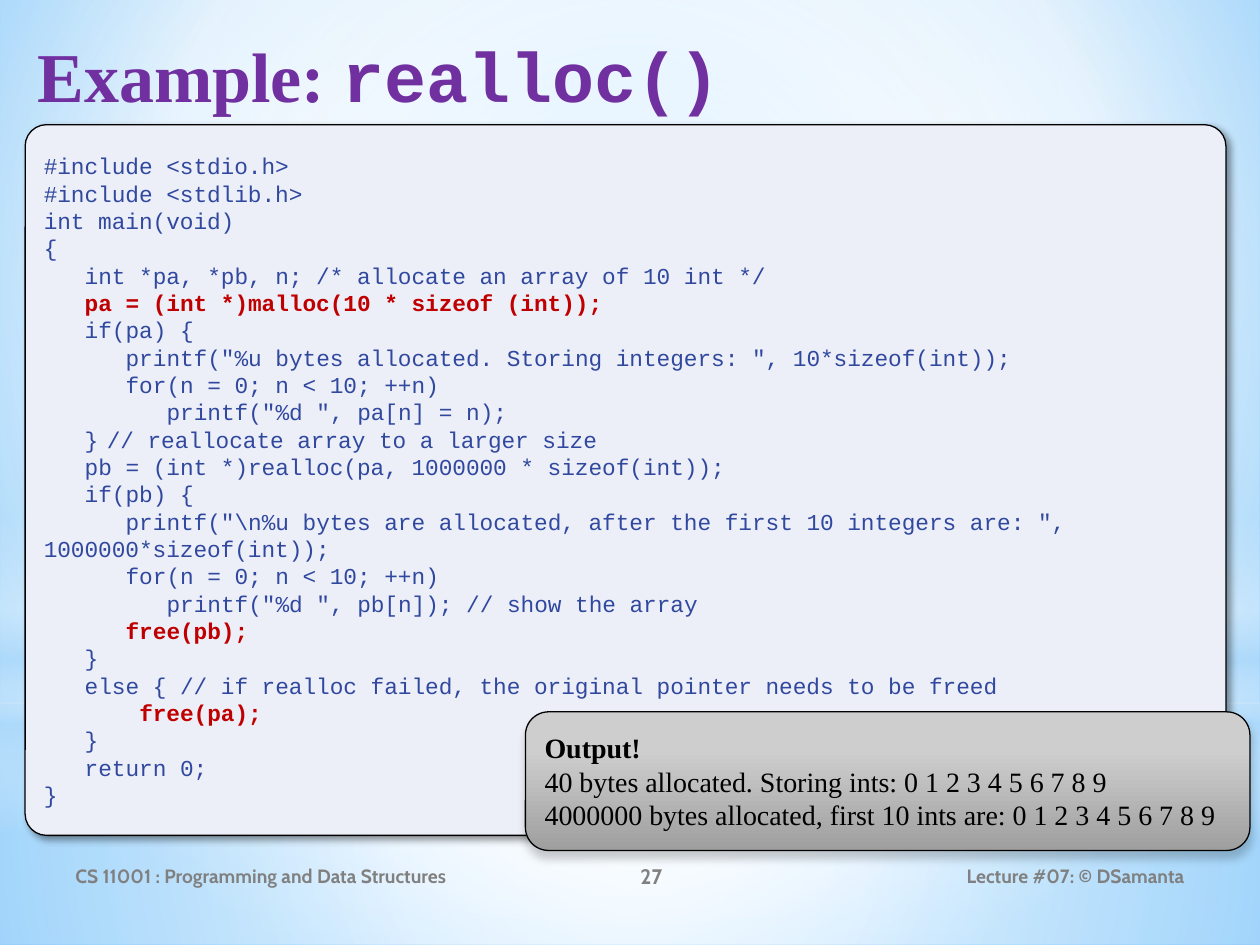
from lxml import etree
from pptx import Presentation
from pptx.dml.color import RGBColor
from pptx.enum import shapes, text
from pptx.oxml import ns
from pptx.util import Inches, Pt

THEME = {
    "title": ("7030A0", 40), "code": ("31489F", 13), "key": ("C00000", 13),
    "out": ("000000", 16), "foot": ("808080", 11), "page": ("808080", 12),
    "serif": "Times New Roman", "mono": "Courier New", "sans": "Cabin",
    "panel": "ECEFF8", "edge": "000000",
}
BACK = [(0, "9ED5FF", 100), (60, "FFFFFF", 100), (100, "5BB9FF", 100)]
GREY = [(28, "CECECE", 100), (100, "9F9F9F", 100)]
MID = (50, 50, 50, 50)
KIND = shapes.MSO_SHAPE
GLOWS = [
    (KIND.RECTANGLE, (0, 5.58, 10, 1.92), MID,
     [(0, "FFFFFF", 91), (37, "FFFFFF", 76), (100, "B4DCFA", 79)]),
    (KIND.RECTANGLE, (0, 0, 10, 5.58), MID,
     [(0, "FFFFFF", 89), (48, "FFFFFF", 62), (100, "B4DCFA", 79)]),
    (KIND.RECTANGLE, (0, 4.12, 10, 2.5), None,
     [(0, "FFFFFF", 0), (29, "FFFFFF", 30), (45, "B4DCFA", 40),
      (55, "FFFFFF", 26), (65, "B4DCFA", 60), (100, "FFFFFF", 0)]),
    (KIND.OVAL, (0, 1.75, 10, 5.58), MID,
     [(0, "FFFFFF", 100), (56, "FFFFFF", 0)]),
]
CODE = [
    (0, "#include <stdio.h>"),
    (0, "#include <stdlib.h>"),
    (0, "int main(void)"),
    (0, "{"),
    (3, "int *pa, *pb, n; /* allocate an array of 10 int */"),
    (3, "pa = (int *)malloc(10 * sizeof (int));"),
    (3, "if(pa) {"),
    (6, 'printf("%u bytes allocated. Storing integers: ", 10*sizeof(int));'),
    (6, "for(n = 0; n < 10; ++n)"),
    (9, 'printf("%d ", pa[n] = n);'),
    (3, "}\t// reallocate array to a larger size"),
    (3, "pb = (int *)realloc(pa, 1000000 * sizeof(int));"),
    (3, "if(pb) {"),
    (6, 'printf("\\n%u bytes are allocated, after the first 10 integers are: ", '
        "1000000*sizeof(int));"),
    (6, "for(n = 0; n < 10; ++n)"),
    (9, 'printf("%d ", pb[n]); // show the array'),
    (6, "free(pb);"),
    (3, "}"),
    (3, "else { // if realloc failed, the original pointer needs to be freed"),
    (7, "free(pa);"),
    (3, "}"),
    (3, "return 0;"),
    (0, "}"),
]
KEYS = ("pa =", "free")
OUTPUT = [
    "Output!",
    "40 bytes allocated. Storing ints: 0 1 2 3 4 5 6 7 8 9",
    "4000000 bytes allocated, first 10 ints are: 0 1 2 3 4 5 6 7 8 9",
]
ALIGN = text.PP_ALIGN
FOOT = [
    ("CS 11001 : Programming and Data Structures", 0.5, 3.67, ALIGN.LEFT, "foot"),
    ("27", 4.17, 2, ALIGN.CENTER, "page"),
    ("Lecture #07: © DSamanta", 6.75, 2.75, ALIGN.RIGHT, "foot"),
]
CHAR = 0.6 * THEME["code"][1] / 72
TAB = 4 + CHAR


def node(top, tag, **atts):
    kid = etree.SubElement(top, ns.qn("a:" + tag))
    for key, val in atts.items():
        kid.set(key, str(val))
    return kid


def tint(top, color, part):
    node(node(top, "srgbClr", val=color), "alpha", val=part * 1000)


def blend(fill, props, stops, box=None):
    fill.gradient()
    grad = props.find(ns.qn("a:gradFill"))
    for kid in list(grad):
        grad.remove(kid)
    grad.set("rotWithShape", "1")
    steps = node(grad, "gsLst")
    for pos, color, part in stops:
        tint(node(steps, "gs", pos=pos * 1000), color, part)
    if box:
        way = node(grad, "path", path="circle")
        node(way, "fillToRect", **{k: v * 1000 for k, v in zip("ltrb", box)})
    else:
        node(grad, "lin", ang=90 * 60000, scaled=0)


def shade(shape, part, blur, dist, turn):
    props = shape.element.spPr
    for old in props.findall(ns.qn("a:effectLst")):
        props.remove(old)
    drop = node(node(props, "effectLst"), "outerShdw", blurRad=Pt(blur),
                dist=Pt(dist), dir=turn * 60000, algn="tl", rotWithShape=0)
    tint(drop, THEME["edge"], part)


def write(para, words, style, face, bold=False):
    run = para.add_run()
    run.text = words
    color, size = THEME[style]
    run.font.name, run.font.size, run.font.bold = THEME[face], Pt(size), bold
    run.font.color.rgb = RGBColor.from_string(color)


def lines(frame, count):
    frame.word_wrap = True
    for n in range(count):
        para = frame.add_paragraph() if n else frame.paragraphs[0]
        para.alignment = ALIGN.LEFT
        yield para


def place(slide, kind, at):
    shape = slide.shapes.add_shape(kind, *map(Inches, at))
    shape.shadow.inherit = False
    shape.line.fill.background()
    return shape


def panel(slide, at):
    shape = place(slide, KIND.ROUNDED_RECTANGLE, at)
    shape.line.color.rgb = RGBColor.from_string(THEME["edge"])
    shape.line.width = Pt(0.75)
    shape.text_frame.vertical_anchor = text.MSO_ANCHOR.MIDDLE
    return shape


def label(slide, at):
    frame = slide.shapes.add_textbox(*map(Inches, at)).text_frame
    return frame, next(lines(frame, 1))


def main():
    deck = Presentation()
    deck.slide_width, deck.slide_height = Inches(10), Inches(7.5)
    slide = deck.slides.add_slide(deck.slide_layouts[6])

    fill = slide.background.fill
    blend(fill, slide.element.cSld.bg.bgPr, BACK, (20, 10, 20, 60))
    for kind, at, box, stops in GLOWS:
        glow = place(slide, kind, at)
        blend(glow.fill, glow.element.spPr, stops, box)

    frame, para = label(slide, (0.2, 0.13, 9.53, 1.25))
    frame.margin_top = Inches(0.13)
    write(para, "Example: ", "title", "serif", True)
    write(para, "realloc()", "title", "mono", True)

    for words, left, width, align, style in FOOT:
        frame, para = label(slide, (left, 6.75, width, 0.4))
        frame.vertical_anchor = text.MSO_ANCHOR.MIDDLE
        para.alignment = align
        write(para, words, style, "sans", True)

    code = panel(slide, (0.2, 0.99, 9.53, 5.64))
    code.adjustments[0] = 0.03
    code.fill.solid()
    code.fill.fore_color.rgb = RGBColor.from_string(THEME["panel"])
    shade(code, 40, 4, 3, 45)
    for para, (dent, words) in zip(lines(code.text_frame, len(CODE)), CODE):
        props = para._p.get_or_add_pPr()
        props.set("marL", "0")
        props.set("indent", str(Inches(dent * CHAR)))
        if "\t" in words:
            node(node(props, "tabLst"), "tab", pos=Inches(TAB), algn="l")
        key = words.startswith(KEYS)
        write(para, words, "key" if key else "code", "mono", key)

    out = panel(slide, (4.17, 5.65, 5.75, 1.1))
    blend(out.fill, out.element.spPr, GREY)
    shade(out, 20, 5, 4, 90)
    for para, words in zip(lines(out.text_frame, len(OUTPUT)), OUTPUT):
        write(para, words, "out", "serif", words == OUTPUT[0])

    deck.save("out.pptx")


if __name__ == "__main__":
    main()
